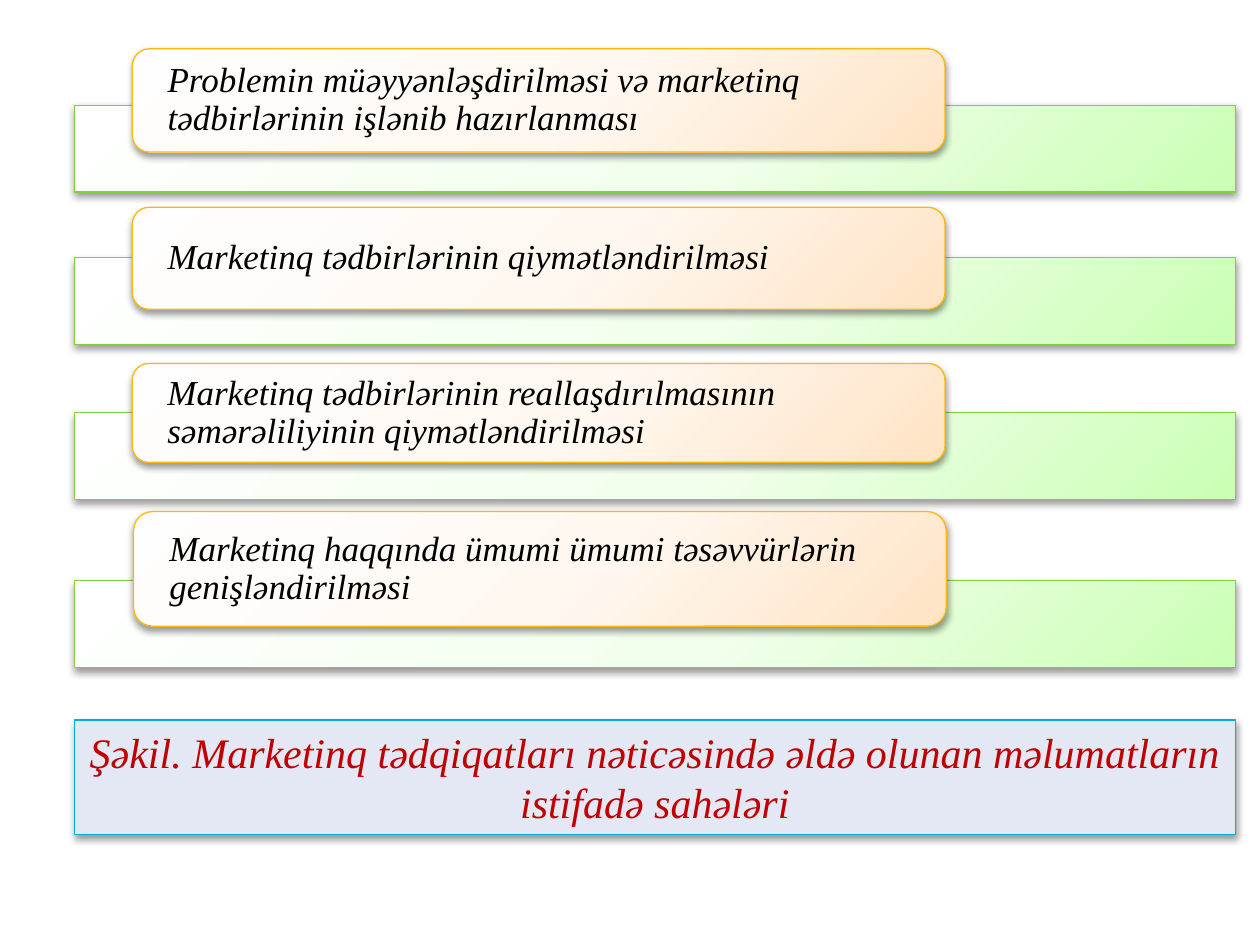
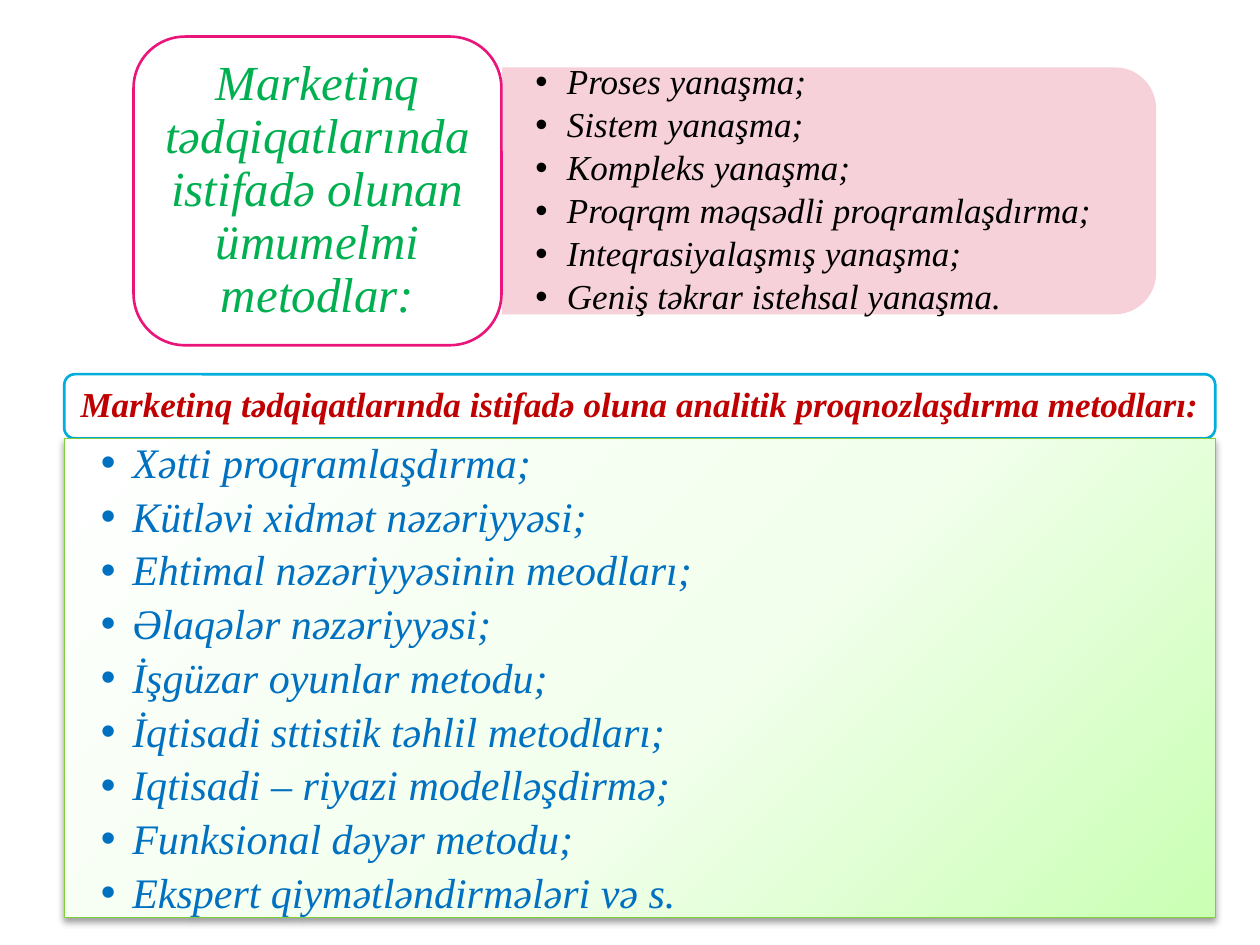
"""Build two slides on the uses and methods of marketing research."""
from lxml import etree
from pptx import Presentation
from pptx.dml.color import RGBColor
from pptx.enum.shapes import MSO_SHAPE
from pptx.enum.text import MSO_ANCHOR, PP_ALIGN
from pptx.oxml import parse_xml
from pptx.oxml.ns import nsdecls, qn
from pptx.util import Inches, Pt

RECT, ROUNDED = MSO_SHAPE.RECTANGLE, MSO_SHAPE.ROUNDED_RECTANGLE
ROUND_TOP = MSO_SHAPE.ROUND_2_SAME_RECTANGLE
LEFT, CENTER = PP_ALIGN.LEFT, PP_ALIGN.CENTER
TOP, MIDDLE = MSO_ANCHOR.TOP, MSO_ANCHOR.MIDDLE

BLACK = RGBColor(0x00, 0x00, 0x00)
WHITE = RGBColor(0xFF, 0xFF, 0xFF)
RED = RGBColor(0xC0, 0x00, 0x00)
GREEN = RGBColor(0x00, 0xB0, 0x50)
BLUE = RGBColor(0x00, 0x70, 0xC0)
LIME = RGBColor(0x7F, 0xD1, 0x3B)
AMBER = RGBColor(0xFE, 0xB8, 0x0A)
CYAN = RGBColor(0x00, 0xAD, 0xDC)
MAGENTA = RGBColor(0xEA, 0x15, 0x7A)
PINK = RGBColor(0xF7, 0xCC, 0xD7)
PALE_BLUE = RGBColor(0xE3, 0xE8, 0xF4)
GREEN_GLOW = [RGBColor(0xFE, 0xFF, 0xFE), RGBColor(0xF2, 0xFF, 0xED), RGBColor(0xCA, 0xFF, 0xB4)]
PEACH_GLOW = [RGBColor(0xFF, 0xFE, 0xFE), RGBColor(0xFF, 0xF8, 0xF1), RGBColor(0xFF, 0xE3, 0xC4)]
GLOW_STOPS = (0, 55, 100)

FONT = "Times New Roman"
COLS, ROWS = 100, 75
CELL = Inches(0.1)

GREEN_BAND = {"kind": RECT, "fill": GREEN_GLOW, "line": LIME, "raised": True}
STAGE_CARD = {"kind": ROUNDED, "fill": PEACH_GLOW, "line": AMBER, "raised": True}
CAPTION = {"kind": RECT, "fill": PALE_BLUE, "line": CYAN, "raised": True}


def add_panel(slide, box, kind, fill, line=None, weight=0.75, raised=False):
    panel = slide.shapes.add_shape(kind, *[round(CELL * units) for units in box])
    properties = panel.fill._xPr
    if isinstance(fill, list):
        panel.fill.background()
        stops = "".join(
            f'<a:gs pos="{stop * 1000}"><a:srgbClr val="{color}"/></a:gs>'
            for stop, color in zip(GLOW_STOPS, fill))
        properties.replace(properties.find(qn("a:noFill")), parse_xml(
            f'<a:gradFill {nsdecls("a")} rotWithShape="1"><a:gsLst>{stops}</a:gsLst>'
            '<a:path path="circle"><a:fillToRect l="-40000" t="-90000" r="140000" b="190000"/>'
            '</a:path></a:gradFill>'))
    else:
        panel.fill.solid()
        panel.fill.fore_color.rgb = fill
    if line is None:
        panel.line.fill.background()
    else:
        panel.line.color.rgb = line
        panel.line.width = Pt(weight)
    panel.shadow.inherit = False
    if raised:
        properties.find(qn("a:effectLst")).append(parse_xml(
            f'<a:outerShdw {nsdecls("a")} blurRad="52000" dist="25400" dir="5400000" rotWithShape="0">'
            '<a:srgbClr val="000000"><a:alpha val="40000"/></a:srgbClr></a:outerShdw>'))
    return panel


def write(shape, lines, size, color, align=LEFT, anchor=MIDDLE, margins=(1, 0.5),
          spacing=0.9, bold=False, bullet_gap=None):
    frame = shape.text_frame
    side, edge = [round(CELL * units) for units in margins]
    frame_format = {"word_wrap": True, "vertical_anchor": anchor, "margin_left": side,
                    "margin_right": side, "margin_top": edge, "margin_bottom": edge}
    for name, value in frame_format.items():
        setattr(frame, name, value)
    frame.text = "\n".join(lines)
    for paragraph in frame.paragraphs:
        paragraph.alignment = align
        paragraph.line_spacing = spacing
        font_format = {"name": FONT, "size": Pt(size), "italic": True, "bold": bold}
        for name, value in font_format.items():
            setattr(paragraph.runs[0].font, name, value)
        paragraph.runs[0].font.color.rgb = color
        if bullet_gap is not None:
            paragraph.level = 1
            paragraph.space_after = Pt(bullet_gap)
            settings = paragraph._p.get_or_add_pPr()
            settings.set("marL", str(Inches(0.25)))
            settings.set("indent", str(-Inches(0.25)))
            etree.SubElement(settings, qn("a:buFont")).set("typeface", "Arial")
            etree.SubElement(settings, qn("a:buChar")).set("char", "•")


prs = Presentation()
prs.slide_width, prs.slide_height = CELL * COLS, CELL * ROWS
blank = prs.slide_layouts[6]

uses = prs.slides.add_slide(blank)
band_left, band_width, band_height = 5.9, 92.15, 6.9
stages = [
    (8.35, 10.5, 3.87, 8.2, "Problemin müəyyənləşdirilməsi və marketinq tədbirlərinin işlənib hazırlanması"),
    (20.45, 10.5, 16.45, 8.1, "Marketinq tədbirlərinin qiymətləndirilməsi"),
    (32.75, 10.5, 28.85, 7.85, "Marketinq tədbirlərinin reallaşdırılmasının səmərəliliyinin qiymətləndirilməsi"),
    (46.1, 10.6, 40.6, 9.1, "Marketinq haqqında ümumi ümumi təsəvvürlərin genişləndirilməsi"),
]
for band_top, card_left, card_top, card_height, stage in stages:
    add_panel(uses, (band_left, band_top, band_width, band_height), **GREEN_BAND)
    card = add_panel(uses, (card_left, card_top, 64.5, card_height), **STAGE_CARD)
    write(card, [stage], 20, BLACK, margins=(2.4, 0))

caption = add_panel(uses, (band_left, 57.15, band_width, 9.1), **CAPTION)
write(caption, ["Şəkil. Marketinq tədqiqatları nəticəsində əldə olunan məlumatların istifadə sahələri"],
      24, RED, align=CENTER, anchor=TOP, spacing=1.0)

methods = prs.slides.add_slide(blank)
approaches_tab = add_panel(methods, (56, -10.8, 19.6, 51.9), ROUND_TOP, PINK)
approaches_tab.rotation = 90
tab_color = approaches_tab.fill._xPr.find(qn("a:solidFill"))[0]
etree.SubElement(tab_color, qn("a:alpha")).set("val", "90000")

approaches = methods.shapes.add_textbox(*[round(CELL * units) for units in (39.8, 6.3, 51, 17.7)])
write(approaches, [
    "Proses yanaşma;",
    "Sistem yanaşma;",
    "Kompleks yanaşma;",
    "Proqrqm məqsədli proqramlaşdırma;",
    "Inteqrasiyalaşmış yanaşma;",
    "Geniş təkrar istehsal yanaşma.",
], 20, BLACK, margins=(2.7, 1.4), bullet_gap=3)

general_heading = add_panel(methods, (10.6, 2.9, 29.2, 24.5), ROUNDED, WHITE, MAGENTA, 1.5)
write(general_heading, ["Marketinq tədqiqatlarında istifadə olunan ümumelmi metodlar:"],
      28, GREEN, align=CENTER, margins=(1.2, 0.6))

analytic_left, analytic_width = 5.1, 91.35
analytic_heading = add_panel(methods, (analytic_left, 29.7, analytic_width, 5.1), ROUNDED, WHITE, CYAN, 1.5)
write(analytic_heading, ["Marketinq tədqiqatlarında istifadə oluna analitik proqnozlaşdırma metodları:"],
      20, RED, align=CENTER, margins=(0.8, 0.8), bold=True)

analytic_methods = add_panel(methods, (analytic_left, 34.8, analytic_width, 38), **GREEN_BAND)
write(analytic_methods, [
    "Xətti proqramlaşdırma;",
    "Kütləvi xidmət nəzəriyyəsi;",
    "Ehtimal nəzəriyyəsinin meodları;",
    "Əlaqələr nəzəriyyəsi;",
    "İşgüzar oyunlar metodu;",
    "İqtisadi sttistik təhlil metodları;",
    "Iqtisadi – riyazi modelləşdirmə;",
    "Funksional dəyər metodu;",
    "Ekspert qiymətləndirmələri və s.",
], 24, BLUE, anchor=TOP, margins=(2.9, 0.3), bullet_gap=4.8)

prs.save("out.pptx")
